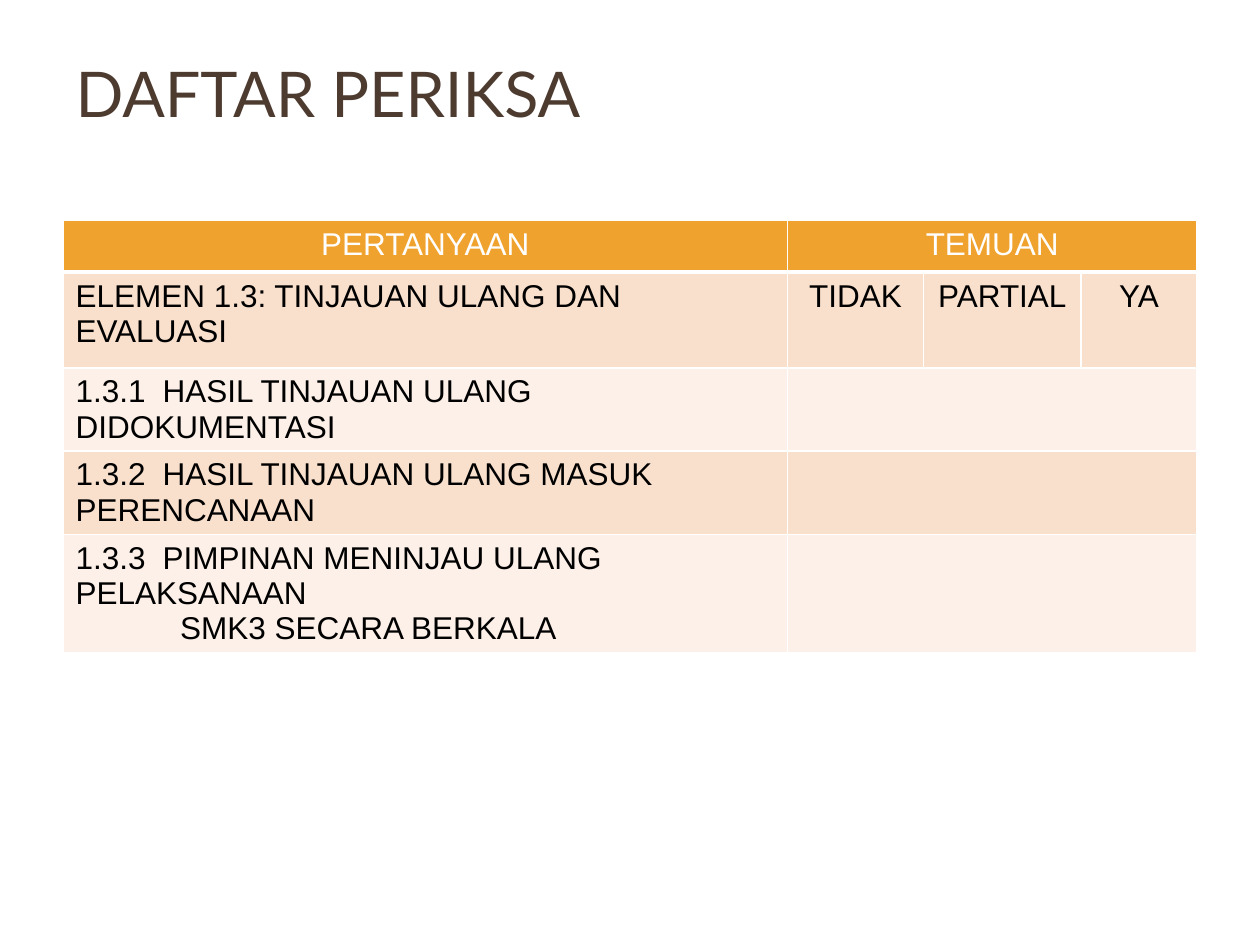
"""Build the "Daftar Periksa" checklist slide."""
from lxml import etree
from pptx import Presentation
from pptx.dml.color import RGBColor
from pptx.enum.text import MSO_ANCHOR, PP_ALIGN
from pptx.oxml.ns import qn
from pptx.util import Inches, Pt

LEFT, CENTER = PP_ALIGN.LEFT, PP_ALIGN.CENTER
MIDDLE = MSO_ANCHOR.MIDDLE

BROWN = RGBColor(0x4E, 0x3B, 0x30)
ORANGE = RGBColor(0xF0, 0xA2, 0x2E)
PEACH = RGBColor(0xF9, 0xE0, 0xCD)
CREAM = RGBColor(0xFC, 0xF0, 0xE8)
WHITE = RGBColor(0xFF, 0xFF, 0xFF)
BLACK = RGBColor(0x00, 0x00, 0x00)

COL_WIDTHS = [5.75, 1.08, 1.25, 0.92]
ROW_HEIGHTS = [0.41, 0.76, 0.41, 0.41, 0.41]
NUMBER_TAB = Inches(0.69)
CONTINUATION_INDENT = Inches(0.83)
ROWS = [
    ["PERTANYAAN", "TEMUAN"],
    ["ELEMEN 1.3: TINJAUAN ULANG DAN EVALUASI", "TIDAK", "PARTIAL", "YA"],
    ["1.3.1\tHASIL TINJAUAN ULANG DIDOKUMENTASI"],
    ["1.3.2\tHASIL TINJAUAN ULANG MASUK PERENCANAAN"],
    ["1.3.3\tPIMPINAN MENINJAU ULANG PELAKSANAAN\nSMK3 SECARA BERKALA"],
]


def set_font(p, name, size, color):
    """Set the font of a whole paragraph."""
    p.font.name = name
    p.font.size = Pt(size)
    p.font.color.rgb = color


def add_title(s, text):
    """Fill and place the title placeholder."""
    sp = s.shapes.title
    sp.left, sp.top = Inches(0.5), Inches(0.3)
    sp.width, sp.height = Inches(9), Inches(0.87)
    tf = sp.text_frame
    tf.text = text
    tf.vertical_anchor = MIDDLE
    p = tf.paragraphs[0]
    p.alignment = LEFT
    set_font(p, "Lato", 36, BROWN)


def set_borders(cell, bottom_width):
    """Draw white borders on all four sides of a cell."""
    tcPr = cell._tc.get_or_add_tcPr()
    widths = {"a:lnL": 1, "a:lnR": 1, "a:lnT": 1, "a:lnB": bottom_width}
    for i, (tag, width) in enumerate(widths.items()):
        ln = etree.Element(qn(tag), w=str(Pt(width)))
        fill = etree.SubElement(ln, qn("a:solidFill"))
        etree.SubElement(fill, qn("a:srgbClr"), val=str(WHITE))
        tcPr.insert(i, ln)


def add_tab_stop(p, position):
    """Give a paragraph one left tab stop."""
    tabs = etree.Element(qn("a:tabLst"))
    etree.SubElement(tabs, qn("a:tab"), pos=str(position), algn="l")
    p._p.get_or_add_pPr().insert(0, tabs)


def write_cell(cell, text, color, alignment):
    """Write the paragraphs of a cell, indenting continuation lines."""
    tf = cell.text_frame
    tf.text = text
    for i, p in enumerate(tf.paragraphs):
        p.alignment = alignment
        set_font(p, "Arial", 18, color)
        if "\t" in p.text:
            add_tab_stop(p, NUMBER_TAB)
        if i > 0:
            p._p.get_or_add_pPr().set("marL", str(CONTINUATION_INDENT))


def add_checklist(s):
    """Add the checklist table with its findings columns."""
    frame = s.shapes.add_table(
        len(ROWS), len(COL_WIDTHS), Inches(0.5), Inches(1.75),
        Inches(sum(COL_WIDTHS)), Inches(sum(ROW_HEIGHTS)))
    table = frame.table
    table.first_row = table.horz_banding = False
    for column, width in zip(table.columns, COL_WIDTHS):
        column.width = Inches(width)
    for r, (texts, height) in enumerate(zip(ROWS, ROW_HEIGHTS)):
        header = r == 0
        table.rows[r].height = Inches(height)
        for c in range(len(COL_WIDTHS)):
            cell = table.cell(r, c)
            cell.fill.solid()
            cell.fill.fore_color.rgb = ORANGE if header else (CREAM, PEACH)[r % 2]
            set_borders(cell, 3 if header else 1)
            if c < len(texts):
                write_cell(cell, texts[c], WHITE if header else BLACK,
                           CENTER if header or c > 0 else LEFT)
        if len(texts) < len(COL_WIDTHS):
            table.cell(r, 1).merge(table.cell(r, 3))


def main():
    """Build and save the presentation."""
    prs = Presentation()
    prs.slide_width, prs.slide_height = Inches(10), Inches(7.5)
    s = prs.slides.add_slide(prs.slide_layouts[5])
    add_title(s, "DAFTAR PERIKSA")
    add_checklist(s)
    prs.save("out.pptx")


if __name__ == "__main__":
    main()
